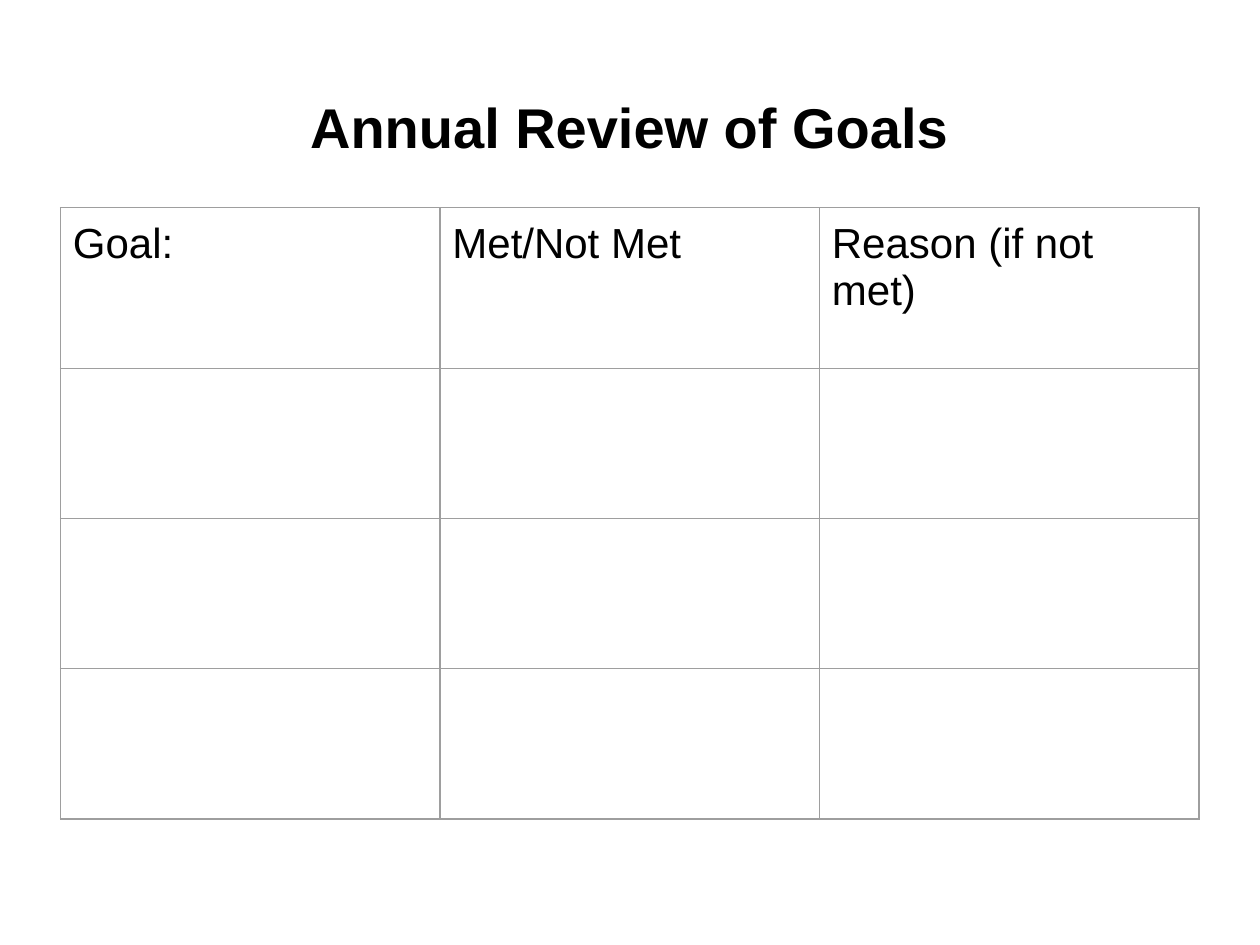
from dataclasses import dataclass

from lxml import etree
from pptx import Presentation
from pptx import util as u
from pptx.dml.color import RGBColor
from pptx.enum import text
from pptx.oxml.ns import qn


@dataclass(frozen=True)
class Theme:
    font: str = "Arial"
    ink: str = "000000"
    border: str = "9E9E9E"
    border_width: float = 0.75
    title_size: int = 32
    cell_size: int = 24
    cell_margin: float = 0.25


class SlideBuilder:
    def __init__(self, slide, theme):
        self.slide = slide
        self.theme = theme

    def add_run(self, paragraph, words, size, bold=False):
        run = paragraph.add_run()
        run.text = words
        run.font.name = self.theme.font
        run.font.size = u.Pt(size)
        run.font.bold = bold
        run.font.color.rgb = RGBColor.from_string(self.theme.ink)

    def add_title(self, words, left, top, width, height, bottom_margin):
        shape = self.slide.shapes.add_textbox(
            u.Cm(left), u.Cm(top), u.Cm(width), u.Cm(height))
        frame = shape.text_frame
        frame.word_wrap = True
        frame.vertical_anchor = text.MSO_ANCHOR.BOTTOM
        frame.margin_bottom = u.Cm(bottom_margin)
        paragraph = frame.paragraphs[0]
        paragraph.alignment = text.PP_ALIGN.CENTER
        self.add_run(paragraph, words, self.theme.title_size, bold=True)

    def set_borders(self, cell):
        properties = cell._tc.get_or_add_tcPr()
        for index, side in enumerate(("lnL", "lnR", "lnT", "lnB")):
            line = etree.Element(qn(f"a:{side}"), w=str(u.Pt(self.theme.border_width)))
            fill = etree.SubElement(line, qn("a:solidFill"))
            etree.SubElement(fill, qn("a:srgbClr"), val=self.theme.border)
            properties.insert(index, line)

    def add_grid(self, headings, left, top, column_width, row_heights):
        table = self.slide.shapes.add_table(
            len(row_heights), len(headings), u.Cm(left), u.Cm(top),
            u.Cm(column_width * len(headings)), u.Cm(sum(row_heights))).table
        table.first_row = False
        table.horz_banding = False
        for column in table.columns:
            column.width = u.Cm(column_width)
        for row, height in zip(table.rows, row_heights):
            row.height = u.Cm(height)
        margin = u.Cm(self.theme.cell_margin)
        for cell in table.iter_cells():
            cell.margin_left = cell.margin_right = margin
            cell.margin_top = cell.margin_bottom = margin
            cell.fill.background()
            self.set_borders(cell)
        for column_index, heading in enumerate(headings):
            paragraph = table.cell(0, column_index).text_frame.paragraphs[0]
            self.add_run(paragraph, heading, self.theme.cell_size)


def main():
    presentation = Presentation()
    presentation.slide_width = u.Cm(25.4)
    presentation.slide_height = u.Cm(19.05)
    slide = presentation.slides.add_slide(presentation.slide_layouts[6])
    builder = SlideBuilder(slide, Theme())
    builder.add_title("Annual Review of Goals", 2.49, 0.58, 20.4, 4.06,
                      bottom_margin=1.42)
    builder.add_grid(["Goal:", "Met/Not Met", "Reason (if not met)"],
                     1.22, 4.19, 7.65, [3.23] + [3.03] * 3)
    presentation.save("out.pptx")


if __name__ == "__main__":
    main()
